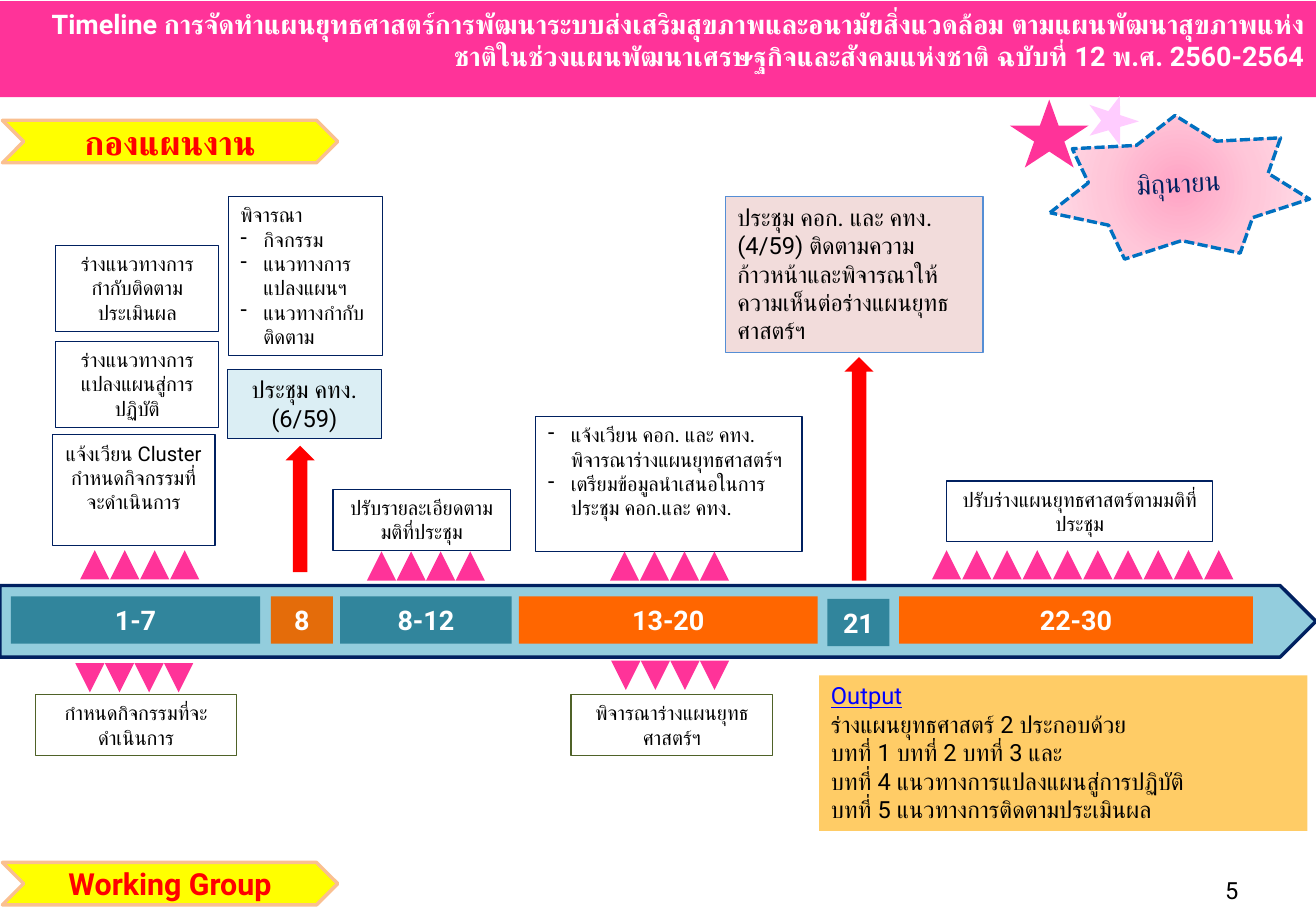
from pptx import Presentation
from pptx.dml.color import RGBColor
from pptx.enum.dml import MSO_LINE
from pptx.enum.shapes import MSO_SHAPE as Shape
from pptx.enum.text import MSO_ANCHOR as Anchor, MSO_AUTO_SIZE as Fit, PP_ALIGN as Align
from pptx.oxml import parse_xml
from pptx.oxml.ns import nsdecls, qn
from pptx.util import Inches, Pt
from lxml.etree import SubElement

FONT = "Roboto"
COLOR = {
    "pink": "FF3399", "pale": "FFCCFF", "white": "FFFFFF", "black": "000000",
    "navy": "002060", "sky": "93CDDD", "teal": "31859C", "rust": "E46C0A",
    "orange": "FF6600", "red": "FF0000", "yellow": "FFFF00", "peach": "FAC090",
    "blue": "0070C0", "link": "0000FF", "gold": "FFCC66", "rose": "F2DCDB",
    "azure": "558ED5", "ice": "DBEEF4", "olive": "4F6228",
}


def rgb(name):
    return RGBColor.from_string(COLOR[name])


def draw(slide, kind, box, fill=None, line=None, width=0.75):
    shape = slide.shapes.add_shape(kind, *map(Inches, box))
    shape.shadow.inherit = False
    if fill:
        shape.fill.solid()
        shape.fill.fore_color.rgb = rgb(fill)
    else:
        shape.fill.background()
    if line:
        shape.line.color.rgb = rgb(line)
        shape.line.width = Pt(width)
    else:
        shape.line.fill.background()
    return shape


def style(para, size, color, bold=False, align=Align.LEFT):
    para.alignment = align
    font = para.font
    font.name, font.size, font.bold = FONT, Pt(size), bold
    font.color.rgb = rgb(color)


def write(shape, lines, size, color="black", bold=False, align=Align.CENTER,
          anchor=Anchor.MIDDLE):
    """Fill a shape with paragraphs; a leading "- " makes a dash bullet."""
    frame = shape.text_frame
    frame.word_wrap = True
    frame.vertical_anchor = anchor
    for i, line in enumerate(lines):
        para = frame.add_paragraph() if i else frame.paragraphs[0]
        para.text = line.removeprefix("- ")
        style(para, size, color, bold, align)
        if line.startswith("- "):
            props = para._p.get_or_add_pPr()
            props.set("marL", str(Inches(0.19)))
            props.set("indent", str(-Inches(0.19)))
            dash = SubElement(props, qn("a:buChar"))
            dash.set("char", "-")
            props.insert(0, dash)
    return frame


def note(slide, box, lines, size=12, fill=None, line="navy", align=Align.CENTER):
    shape = draw(slide, Shape.RECTANGLE, box, fill, line)
    frame = write(shape, lines, size, align=align, anchor=Anchor.TOP)
    frame.auto_size = Fit.SHAPE_TO_FIT_TEXT
    return frame


def header(slide, box):
    shape = draw(slide, Shape.RECTANGLE, box, "pink")
    text = ("Timeline การจัดทำแผนยุทธศาสตร์การพัฒนาระบบส่งเสริมสุขภาพและอนามัยสิ่งแวดล้อม "
            "ตามแผนพัฒนาสุขภาพแห่งชาติในช่วงแผนพัฒนาเศรษฐกิจและสังคมแห่งชาติ "
            "ฉบับที่ 12 พ.ศ. 2560-2564")
    frame = write(shape, [text], 16, "white", True, Align.RIGHT, Anchor.TOP)
    frame.paragraphs[0]._p.get_or_add_pPr().set("marL", str(Inches(0.1)))


def timeline(slide, box):
    x, y, w, h = box
    draw(slide, Shape.PENTAGON, box, "sky", "navy", 2)
    for left, top, wide, fill, days in [
        (0.09, 0.09, 2.05, "teal", "1-7"),
        (2.23, 0.09, 0.51, "rust", "8"),
        (2.8, 0.09, 1.41, "teal", "8-12"),
        (4.27, 0.09, 2.46, "orange", "13-20"),
        (6.81, 0.11, 0.51, "teal", "21"),
        (7.4, 0.09, 2.91, "orange", "22-30"),
    ]:
        span = draw(slide, Shape.RECTANGLE, (x + left, y + top, wide, 0.39), fill)
        write(span, [days], 16, "white", True)


def banner(slide, box, text, size):
    shape = draw(slide, Shape.CHEVRON, box, "yellow", "peach", 2)
    write(shape, [text], size, "red", True)


def month(slide, box):
    x, y, w, h = box
    # Month burst with a round gradient
    burst = draw(slide, Shape.STAR_7_POINT, (x + 0.32, y + 0.17, 2.14, 1.16),
                 "pale", "blue", 2)
    burst.rotation = 357
    burst.line.dash_style = MSO_LINE.SQUARE_DOT
    stops = "".join(
        f'<a:gs pos="{pos}"><a:srgbClr val="{tone}"/></a:gs>'
        for pos, tone in [(0, "FFA3C4"), (50000, "FFC7D9"), (100000, "FFE4EC")])
    grad = parse_xml(
        f'<a:gradFill {nsdecls("a")} rotWithShape="1"><a:gsLst>{stops}</a:gsLst>'
        '<a:path path="circle"><a:fillToRect l="50000" t="50000" r="50000" b="50000"/>'
        '</a:path></a:gradFill>')
    props = burst._element.spPr
    props.replace(props.find(qn("a:solidFill")), grad)
    write(burst, ["มิถุนายน"], 16, "navy")
    # Small stars
    draw(slide, Shape.STAR_5_POINT, (x, y + 0.04, 0.65, 0.56), "pink")
    star = draw(slide, Shape.STAR_5_POINT, (x + 0.63, y, 0.43, 0.39), "pale")
    star.rotation = 18.5


def output(slide, box):
    frame = note(slide, box, [
        "Output",
        "ร่างแผนยุทธศาสตร์ 2 ประกอบด้วย",
        "บทที่ 1 บทที่ 2 บทที่ 3 และ",
        "บทที่ 4 แนวทางการแปลงแผนสู่การปฏิบัติ",
        "บทที่ 5 แนวทางการติดตามประเมินผล",
    ], 14, "gold", None, Align.LEFT)
    head = frame.paragraphs[0].font
    head.underline = True
    head.color.rgb = rgb("link")


def marks(slide, box, count, down=False):
    """A row of evenly spaced triangles across the box."""
    x, y, w, h = box
    step = (w - h) / (count - 1)
    for i in range(count):
        mark = draw(slide, Shape.ISOSCELES_TRIANGLE, (x + i * step, y, h, h), "pink")
        mark.rotation = 180 if down else 0


def number(slide, box):
    write(slide.shapes.add_textbox(*map(Inches, box)), ["5"], 14, align=Align.RIGHT)


def main():
    deck = Presentation()
    deck.slide_width, deck.slide_height = Inches(10.83), Inches(7.5)
    slide = deck.slides.add_slide(deck.slide_layouts[6])

    header(slide, (0, 0.01, 10.83, 0.79))
    timeline(slide, (0, 4.82, 10.83, 0.59))
    for box in [(2.35, 3.67, 0.24, 1.04), (6.95, 2.94, 0.24, 1.84)]:
        draw(slide, Shape.UP_ARROW, box, "red")
    month(slide, (8.31, 0.78, 2.46, 1.33))
    banner(slide, (0.02, 0.99, 2.76, 0.35), "กองแผนงาน", 20)
    banner(slide, (0.02, 7.1, 2.76, 0.35), "Working Group", 18)
    output(slide, (6.74, 5.56, 4.02, 1.28))

    # Meetings
    note(slide, (5.97, 1.62, 2.12, 1.28),
         ["ประชุม คอก. และ คทง. (4/59) ติดตามความก้าวหน้าและพิจารณาให้ความเห็นต่อร่างแผนยุทธศาสตร์ฯ"],
         14, "rose", "azure", Align.LEFT)
    note(slide, (1.87, 3.04, 1.27, 0.57), ["ประชุม คทง. (6/59)"], 14, "ice")

    # Tasks above and below the timeline
    for box, text, line in [
        ((0.43, 3.58, 1.34, 0.91), "แจ้งเวียน Cluster กำหนดกิจกรรมที่จะดำเนินการ", "navy"),
        ((0.46, 2.81, 1.34, 0.71), "ร่างแนวทางการแปลงแผนสู่การปฏิบัติ", "navy"),
        ((0.46, 2.02, 1.34, 0.71), "ร่างแนวทางการกำกับติดตามประเมินผล", "navy"),
        ((2.74, 4.03, 1.46, 0.5), "ปรับรายละเอียดตามมติที่ประชุม", "navy"),
        ((7.79, 3.96, 2.19, 0.5), "ปรับร่างแผนยุทธศาสตร์ตามมติที่ประชุม", "navy"),
        ((0.29, 5.72, 1.66, 0.5), "กำหนดกิจกรรมที่จะดำเนินการ", "olive"),
        ((4.7, 5.72, 1.66, 0.5), "พิจารณาร่างแผนยุทธศาสตร์ฯ", "olive"),
    ]:
        note(slide, box, [text], line=line)
    note(slide, (1.88, 1.62, 1.27, 1.31),
         ["พิจารณา", "- กิจกรรม", "- แนวทางการแปลงแผนฯ", "- แนวทางกำกับติดตาม"],
         align=Align.LEFT)
    note(slide, (4.41, 3.43, 2.19, 1.11),
         ["- แจ้งเวียน คอก. และ คทง. พิจารณาร่างแผนยุทธศาสตร์ฯ",
          "- เตรียมข้อมูลนำเสนอในการประชุม คอก.และ คทง."],
         align=Align.LEFT)
    number(slide, (7.76, 7.13, 2.53, 0.4))

    # Triangle rows
    for x, y, w, count, down in [
        (0.66, 4.53, 0.98, 4, False), (0.62, 5.46, 0.97, 4, True),
        (3.02, 4.54, 0.97, 4, False), (5.02, 4.54, 0.98, 4, False),
        (5.03, 5.44, 0.97, 4, True), (7.67, 4.53, 2.48, 10, False),
    ]:
        marks(slide, (x, y, w, 0.24), count, down)

    deck.save("out.pptx")


if __name__ == "__main__":
    main()
